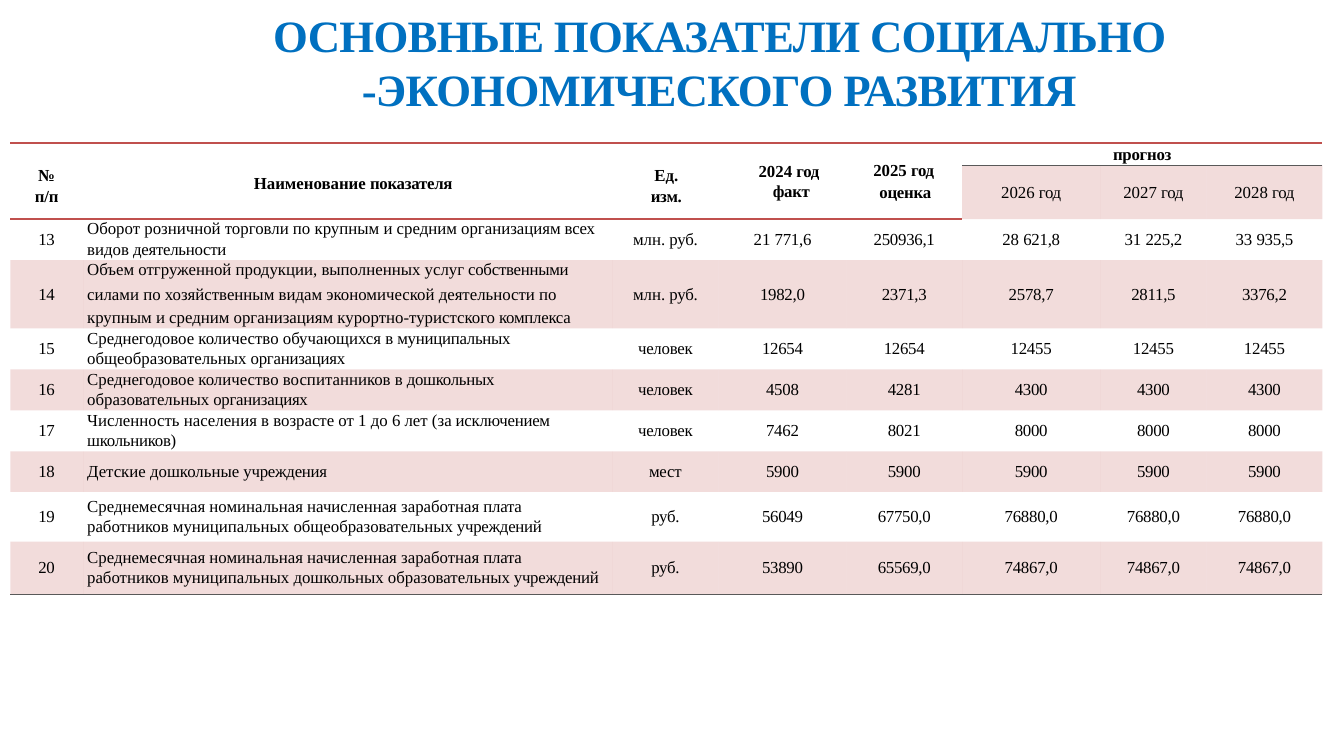
from dataclasses import dataclass

from lxml import etree
from pptx import Presentation
from pptx.dml.color import RGBColor
from pptx.enum.text import MSO_ANCHOR, MSO_AUTO_SIZE, PP_ALIGN
from pptx.oxml.ns import qn
from pptx.util import Pt

LEFT, CENTER = PP_ALIGN.LEFT, PP_ALIGN.CENTER
TOP, MIDDLE = MSO_ANCHOR.TOP, MSO_ANCHOR.MIDDLE
GROW = MSO_AUTO_SIZE.SHAPE_TO_FIT_TEXT
PLAIN_TABLE = "{2D5ABB26-0587-4C30-8999-92F81FD0307C}"


@dataclass(frozen=True)
class Theme:
    font: str = "Times New Roman"
    title_size: float = 24
    table_size: float = 9
    name_leading: float = 9.5
    title: str = "0070C0"
    text: str = "000000"
    accent: str = "C0504D"
    rule: str = "595959"
    band_opacity: int = 20


THEME = Theme()

TITLE = "ОСНОВНЫЕ ПОКАЗАТЕЛИ СОЦИАЛЬНО -ЭКОНОМИЧЕСКОГО РАЗВИТИЯ"
COLUMN_WIDTHS = [39, 283.5, 57, 68.5, 62, 74, 57, 62]
ROW_HEIGHTS = [12, 28.8, 22, 36.5, 22, 22, 22, 21.7, 26.6, 28.2]
FORECAST_COLUMN = 5
FORECAST_YEARS = ["2026 год", "2027 год", "2028 год"]

INDICATORS = [
    ("13", ["Оборот розничной торговли по крупным и средним организациям всех",
            "видов деятельности"],
     "млн. руб.", "21 771,6", "250936,1", "28 621,8", "31 225,2", "33 935,5"),
    ("14", ["Объем отгруженной продукции, выполненных услуг собственными",
            "силами по хозяйственным видам экономической деятельности по "
            "крупным и средним организациям курортно-туристского комплекса"],
     "млн. руб.", "1982,0", "2371,3", "2578,7", "2811,5", "3376,2"),
    ("15", ["Среднегодовое количество обучающихся в муниципальных",
            "общеобразовательных организациях"],
     "человек", "12654", "12654", "12455", "12455", "12455"),
    ("16", ["Среднегодовое количество воспитанников в дошкольных",
            "образовательных организациях"],
     "человек", "4508", "4281", "4300", "4300", "4300"),
    ("17", ["Численность населения в возрасте от 1 до 6 лет (за исключением",
            "школьников)"],
     "человек", "7462", "8021", "8000", "8000", "8000"),
    ("18", ["Детские дошкольные учреждения"],
     "мест", "5900", "5900", "5900", "5900", "5900"),
    ("19", ["Среднемесячная номинальная начисленная заработная плата",
            "работников муниципальных общеобразовательных учреждений"],
     "руб.", "56049", "67750,0", "76880,0", "76880,0", "76880,0"),
    ("20", ["Среднемесячная номинальная начисленная заработная плата",
            "работников муниципальных дошкольных образовательных учреждений"],
     "руб.", "53890", "65569,0", "74867,0", "74867,0", "74867,0"),
]


def add_run(paragraph, text, size, color, bold, tracking):
    run = paragraph.add_run()
    run.text = text
    font = run.font
    font.name, font.size, font.bold = THEME.font, Pt(size), bold
    font.color.rgb = RGBColor.from_string(color)
    run._r.get_or_add_rPr().set("spc", str(round(tracking * 100)))


def write_line(paragraph, text, align=CENTER, bold=False, left=0, right=0,
               spacing=None):
    properties = paragraph._p.get_or_add_pPr()
    properties.set("marL", str(Pt(left)))
    properties.set("marR", str(Pt(right)))
    properties.set("indent", "0")
    paragraph.alignment = align
    if spacing:
        paragraph.line_spacing = spacing
    lead, space, last_word = text.rpartition(" ")
    if lead:
        add_run(paragraph, lead + space, THEME.table_size, THEME.text, bold, 0)
    add_run(paragraph, last_word, THEME.table_size, THEME.text, bold, -0.15)


def write_cell(cell, lines, top=0.4, gap=1.6):
    cell.vertical_anchor = MIDDLE
    cell.margin_left = cell.margin_right = cell.margin_bottom = 0
    cell.margin_top = Pt(top)
    frame = cell.text_frame
    for number, (text, style) in enumerate(lines):
        paragraph = frame.add_paragraph() if number else frame.paragraphs[0]
        if number:
            paragraph.space_before = Pt(gap)
        write_line(paragraph, text, **style)


def add_border(cell, side, color, width):
    border = etree.SubElement(cell._tc.get_or_add_tcPr(), qn(f"a:ln{side}"),
                              w=str(Pt(width)))
    fill = etree.SubElement(border, qn("a:solidFill"))
    etree.SubElement(fill, qn("a:srgbClr"), val=color)


def shade(cell):
    cell.fill.solid()
    cell.fill.fore_color.rgb = RGBColor.from_string(THEME.accent)
    color = cell._tc.tcPr.find(f"{qn('a:solidFill')}/{qn('a:srgbClr')}")
    etree.SubElement(color, qn("a:alpha"), val=str(THEME.band_opacity * 1000))


def add_title(slide):
    title = slide.shapes.title
    title.left, title.top = Pt(114.2), Pt(2.9)
    title.width, title.height = Pt(542), Pt(59)
    frame = title.text_frame
    frame.word_wrap, frame.auto_size = True, GROW
    frame.vertical_anchor = TOP
    frame.margin_left = frame.margin_right = frame.margin_bottom = 0
    frame.margin_top = Pt(1.4)
    paragraph = frame.paragraphs[0]
    paragraph.alignment, paragraph.line_spacing = CENTER, 1.0
    add_run(paragraph, TITLE, THEME.title_size, THEME.title, True, -0.4)


def fill_header(table):
    bold = {"bold": True}
    flush = {"bold": True, "align": LEFT}
    headings = [
        ([("№ п/п", {**bold, "left": 13, "right": 13, "spacing": 1.14})], 4.2, 0),
        ([("Наименование показателя", {**flush, "left": 91.5})], 2.9, 0),
        ([("Ед. изм.", {**bold, "left": 20, "right": 19, "spacing": 1.14})], 4.2, 0),
        ([("2024 год", {**bold, "left": 7}),
          ("факт", {**bold, "left": 9.5})], 0.72, 0.4),
        ([("2025 год", {**flush, "left": 14.4}),
          ("оценка", {**flush, "left": 17.7})], 0.72, 1.6),
    ]
    for column, (lines, top, gap) in enumerate(headings):
        upper, lower = table.cell(0, column), table.cell(1, column)
        write_cell(upper, lines, top, gap)
        add_border(upper, "T", THEME.accent, 1)
        for cell in (upper, lower):
            add_border(cell, "B", THEME.accent, 1)
        upper.merge(lower)

    forecast = table.cell(0, FORECAST_COLUMN)
    write_cell(forecast, [("прогноз", bold)])
    for column, year in enumerate(FORECAST_YEARS, FORECAST_COLUMN):
        group_cell, year_cell = table.cell(0, column), table.cell(1, column)
        add_border(group_cell, "T", THEME.accent, 1)
        add_border(group_cell, "B", THEME.rule, 0.5)
        write_cell(year_cell, [(year, {})])
        shade(year_cell)
    forecast.merge(table.cell(0, FORECAST_COLUMN + len(FORECAST_YEARS) - 1))


def fill_indicators(table):
    for index, (number, name, *values) in enumerate(INDICATORS):
        name_lines = [(text, {"align": LEFT, "left": 2.2,
                              "spacing": Pt(THEME.name_leading)})
                      for text in name]
        if number == "14":
            name_lines[-1][1].update(right=18, spacing=Pt(12.5))
        contents = [[(number, {})], name_lines, *([(value, {})] for value in values)]
        for column, lines in enumerate(contents):
            cell = table.cell(index + 2, column)
            write_cell(cell, lines, gap=0.6 if number == "14" else 1.6)
            if index == len(INDICATORS) - 1:
                add_border(cell, "B", THEME.rule, 0.5)
            if index % 2:
                shade(cell)


def add_indicator_table(slide):
    frame = slide.shapes.add_table(
        len(ROW_HEIGHTS), len(COLUMN_WIDTHS), Pt(5.5), Pt(76.5),
        Pt(sum(COLUMN_WIDTHS)), Pt(sum(ROW_HEIGHTS)))
    table = frame.table
    table.first_row = table.horz_banding = False
    table._tbl.tblPr.find(qn("a:tableStyleId")).text = PLAIN_TABLE
    for column, width in zip(table.columns, COLUMN_WIDTHS):
        column.width = Pt(width)
    for row, height in zip(table.rows, ROW_HEIGHTS):
        row.height = Pt(height)
    fill_header(table)
    fill_indicators(table)


def main():
    presentation = Presentation()
    presentation.slide_width, presentation.slide_height = Pt(720), Pt(405)
    slide = presentation.slides.add_slide(presentation.slide_layouts[5])
    add_indicator_table(slide)
    add_title(slide)
    presentation.save("out.pptx")


if __name__ == "__main__":
    main()
